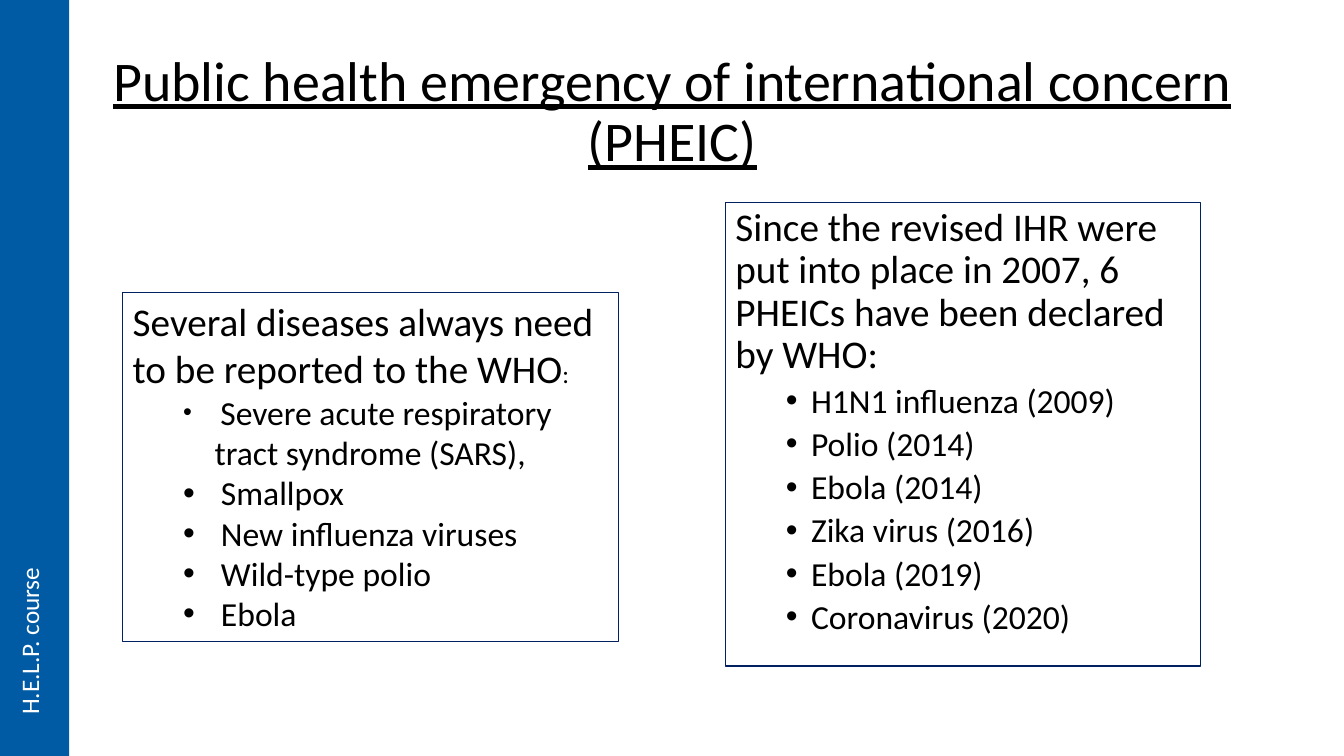
from dataclasses import dataclass

from lxml import etree
from pptx import Presentation
from pptx.dml.color import RGBColor
from pptx.enum.shapes import MSO_SHAPE
from pptx.enum.text import MSO_ANCHOR, PP_ALIGN
from pptx.oxml.ns import qn
from pptx.util import Pt

RECT = MSO_SHAPE.RECTANGLE
TOP, MIDDLE = MSO_ANCHOR.TOP, MSO_ANCHOR.MIDDLE
LEFT, CENTER = PP_ALIGN.LEFT, PP_ALIGN.CENTER


@dataclass(frozen=True)
class Theme:
    """Colours, font and type sizes of the slide."""
    font: str = "Calibri"
    ink: str = "000000"
    light: str = "FFFFFF"
    band: str = "005BA4"
    border: str = "002060"
    title: int = 40
    lead: int = 28
    item: int = 24
    small: int = 18


class Deck:
    """Draws styled elements on the current slide."""

    def __init__(self, prs, theme):
        self.theme = theme
        self.s = prs.slides.add_slide(prs.slide_layouts[6])

    def rect(self, box, fill=None, line=None):
        sp = self.s.shapes.add_shape(RECT, *map(Pt, box))
        sp.shadow.inherit = False
        if fill:
            sp.fill.solid()
            sp.fill.fore_color.rgb = RGBColor.from_string(fill)
        else:
            sp.fill.background()
        if line:
            sp.line.color.rgb = RGBColor.from_string(line)
            sp.line.width = Pt(0.75)
        else:
            sp.line.fill.background()
        return sp

    def frame(self, sp, **fmt):
        tf = sp.text_frame
        for name, value in {"word_wrap": True, "vertical_anchor": TOP, **fmt}.items():
            setattr(tf, name, value)
        return tf

    def para(self, tf, runs, color=None, underline=None, bullet=None, **fmt):
        p = tf.paragraphs[0] if not tf.paragraphs[0].runs else tf.add_paragraph()
        for name, value in {"alignment": LEFT, **fmt}.items():
            setattr(p, name, value)
        if bullet:
            margin, hang = bullet
            p.level = 1
            pPr = p._p.get_or_add_pPr()
            pPr.set("marL", str(Pt(margin)))
            pPr.set("indent", str(-Pt(hang)))
            etree.SubElement(pPr, qn("a:buFont"), typeface="Arial")
            etree.SubElement(pPr, qn("a:buChar"), char="•")
        for text, size in runs:
            r = p.add_run()
            r.text = text
            style = {"name": self.theme.font, "size": Pt(size), "underline": underline}
            for name, value in style.items():
                setattr(r.font, name, value)
            r.font.color.rgb = RGBColor.from_string(color or self.theme.ink)

    def text(self, box, text, size, vert=None, color=None, underline=None, align=LEFT,
             spacing=None, **fmt):
        sp = self.s.shapes.add_textbox(*map(Pt, box))
        tf = self.frame(sp, **fmt)
        if vert:
            tf._txBody.bodyPr.set("vert", vert)
        self.para(tf, [(text, size)], color, underline, alignment=align, line_spacing=spacing)

    def panel(self, box, lead, items, lead_fmt, item_fmt):
        tf = self.frame(self.rect(box, line=self.theme.border))
        self.para(tf, lead, **lead_fmt)
        for runs, bullet in items:
            self.para(tf, runs, bullet=bullet, **item_fmt)


def main():
    prs = Presentation()
    prs.slide_width, prs.slide_height = Pt(960), Pt(540)
    t = Theme()
    deck = Deck(prs, t)

    deck.text((66.25, 28.75, 828, 104.4), "Public health emergency of international concern (PHEIC)",
              t.title, underline=True, align=CENTER, spacing=0.9, vertical_anchor=MIDDLE)

    reported = ["Smallpox", "New influenza viruses", "Wild-type polio", "Ebola"]
    sars = [(" ", t.small), ("Severe acute respiratory tract syndrome (SARS),", t.item)]
    deck.panel((87.75, 209, 354, 249.5),
               [("Several diseases always need to be reported to the WHO", t.lead), (":", t.small)],
               [(sars, (58.5, 22.5))] + [([(name, t.item)], (63, 27)) for name in reported],
               {}, {})

    declared = [("H1N1 influenza", 2009), ("Polio", 2014), ("Ebola", 2014),
                ("Zika virus", 2016), ("Ebola", 2019), ("Coronavirus", 2020)]
    deck.panel((518.25, 144.75, 339.25, 331),
               [("Since the revised IHR were put into place in 2007, "
                 "6 PHEICs have been declared by WHO:", t.lead)],
               [([(f"{name} ({year})", t.item)], (54, 18)) for name, year in declared],
               {"line_spacing": 0.9, "space_before": Pt(10)},
               {"line_spacing": 0.9, "space_before": Pt(5)})

    deck.rect((0, 0, 49.5, 540), fill=t.band)
    deck.text((6.5, 404, 36, 113.75), "H.E.L.P. course", t.small,
              vert="vert270", color=t.light, word_wrap=False)

    prs.save("out.pptx")


if __name__ == "__main__":
    main()
